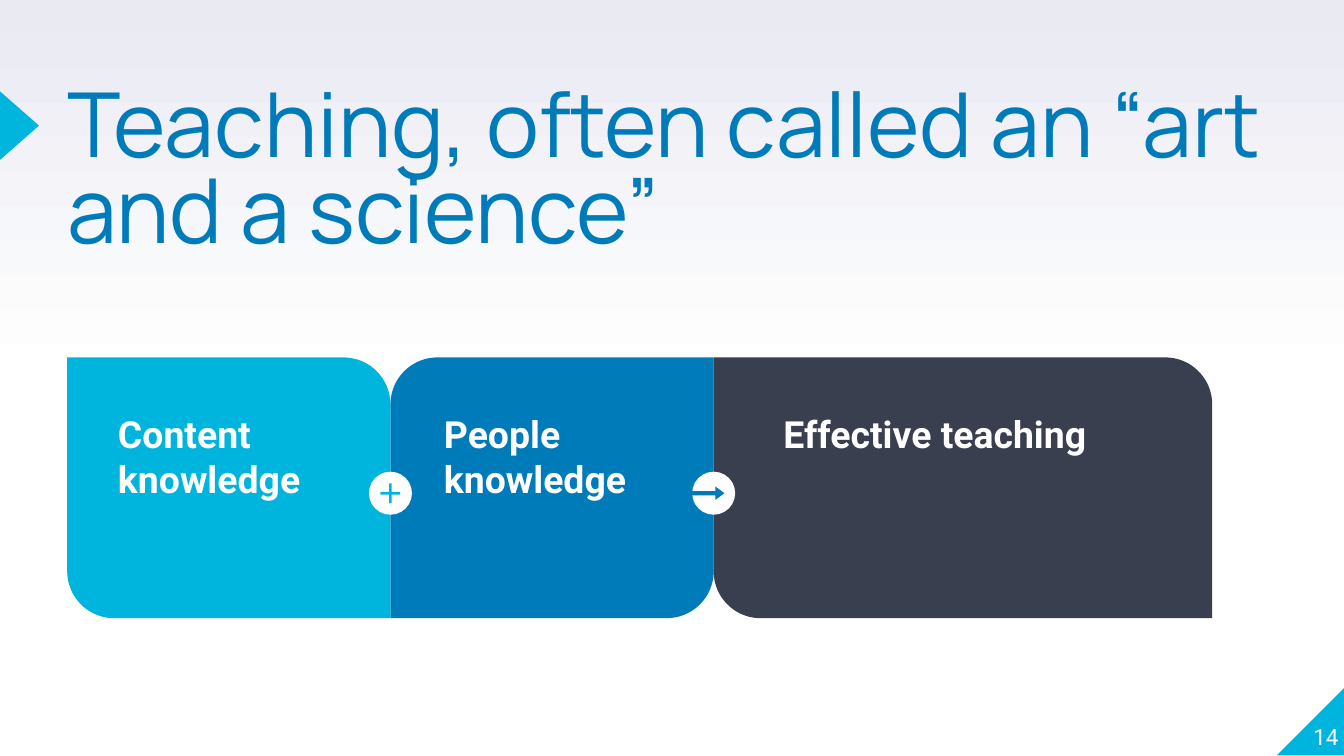
from pptx import Presentation
from pptx.dml.color import RGBColor
from pptx.enum.shapes import MSO_SHAPE as SHAPE
from pptx.enum.text import MSO_ANCHOR as ANCHOR, PP_ALIGN as ALIGN
from pptx.util import Inches, Pt

CYAN, BLUE, SLATE, WHITE, LAVENDER = "00B5DD", "007BB9", "3A3F50", "FFFFFF", "E9EAF2"
ROUNDING = 0.18


def rgb(color):
    return RGBColor.from_string(color)


def add_shape(slide, kind, x, y, w, h, color, adjustments=(), rotation=0):
    sp = slide.shapes.add_shape(kind, Inches(x), Inches(y), Inches(w), Inches(h))
    sp.shadow.inherit = False
    sp.fill.solid()
    sp.fill.fore_color.rgb = rgb(color)
    sp.line.fill.background()
    sp.rotation = rotation
    for i, value in enumerate(adjustments):
        sp.adjustments[i] = value


def add_text(slide, text, x, y, w, h, size, color=WHITE, font="Roboto", bold=False,
             inset=0, align=ALIGN.LEFT, anchor=ANCHOR.TOP, spacing=1.0):
    tf = slide.shapes.add_textbox(Inches(x), Inches(y), Inches(w), Inches(h)).text_frame
    tf.word_wrap = True
    tf.vertical_anchor = anchor
    tf.margin_left = tf.margin_right = tf.margin_top = tf.margin_bottom = Inches(inset)
    p = tf.paragraphs[0]
    p.alignment = align
    p.line_spacing = spacing
    r = p.add_run()
    r.text = text
    r.font.size = Pt(size)
    r.font.name = font
    r.font.bold = bold
    r.font.color.rgb = rgb(color)


def set_background(slide):
    fill = slide.background.fill
    fill.gradient()
    fill.gradient_angle = 90
    for stop, position, color in zip(fill.gradient_stops, (0.5, 1), (WHITE, LAVENDER)):
        stop.position = position
        stop.color.rgb = rgb(color)


def add_title(slide, text, x, y, w, h):
    add_shape(slide, SHAPE.ISOSCELES_TRIANGLE, x - 0.61, y + 0.13, 0.51, 0.29, CYAN,
              rotation=90)
    add_text(slide, text, x, y, w, h, 48, BLUE, "Manrope", spacing=0.8)


def add_page_corner(slide, number, x, y, size):
    add_shape(slide, SHAPE.RIGHT_TRIANGLE, x, y, size, size, CYAN, rotation=270)
    add_text(slide, number, x - 0.04, y - 0.04, 0.5, size, 12,
             align=ALIGN.RIGHT, anchor=ANCHOR.BOTTOM)


def add_panel(slide, text, x, y, w, h, color, corners, text_dx, text_w):
    add_shape(slide, SHAPE.ROUND_2_DIAG_RECTANGLE, x, y, w, h, color, corners)
    add_text(slide, text, x + text_dx, y + 0.3, text_w, 0.57, 20, bold=True, inset=0.1)


def add_badge(slide, cx, cy, size=0.32):
    """White disc centred on the seam between two panels."""
    add_shape(slide, SHAPE.OVAL, cx - size / 2, cy - size / 2, size, size, WHITE)


def add_equation(slide, x, y, w, h):
    """Two knowledge panels that add up to a wider result panel."""
    result_w = 3.71
    term_w = (w - result_w) / 2
    rising, falling = (0, ROUNDING), (ROUNDING, 0)
    plus_x, arrow_x = x + term_w, x + 2 * term_w
    cy = y + h / 2 + 0.04

    add_panel(slide, "People knowledge", plus_x, y, term_w, h, BLUE, falling, 0.3, 1.8)
    add_panel(slide, "Content knowledge", x, y, term_w, h, CYAN, rising, 0.28, 1.8)
    add_panel(slide, "Effective teaching", arrow_x, y, result_w, h, SLATE, rising, 0.42, 2.99)

    add_badge(slide, arrow_x, cy)
    add_shape(slide, SHAPE.RIGHT_ARROW, arrow_x - 0.16, cy - 0.05, 0.24, 0.1, BLUE,
              [0.32, 0.67])
    add_badge(slide, plus_x, cy)
    add_shape(slide, SHAPE.MATH_PLUS, plus_x - 0.1, cy - 0.1, 0.2, 0.2, CYAN, [0.1])


def main():
    prs = Presentation()
    prs.slide_width = Inches(10)
    prs.slide_height = prs.slide_width * 9 // 16
    slide = prs.slides.add_slide(prs.slide_layouts[6])
    set_background(slide)
    add_page_corner(slide, "14", 9.5, 5.11, 0.51)
    add_title(slide, "Teaching, often called an “art and a science”", 0.5, 0.66, 8.96, 1.18)
    add_equation(slide, 0.5, 2.66, 8.52, 1.94)
    prs.save("out.pptx")


if __name__ == "__main__":
    main()
